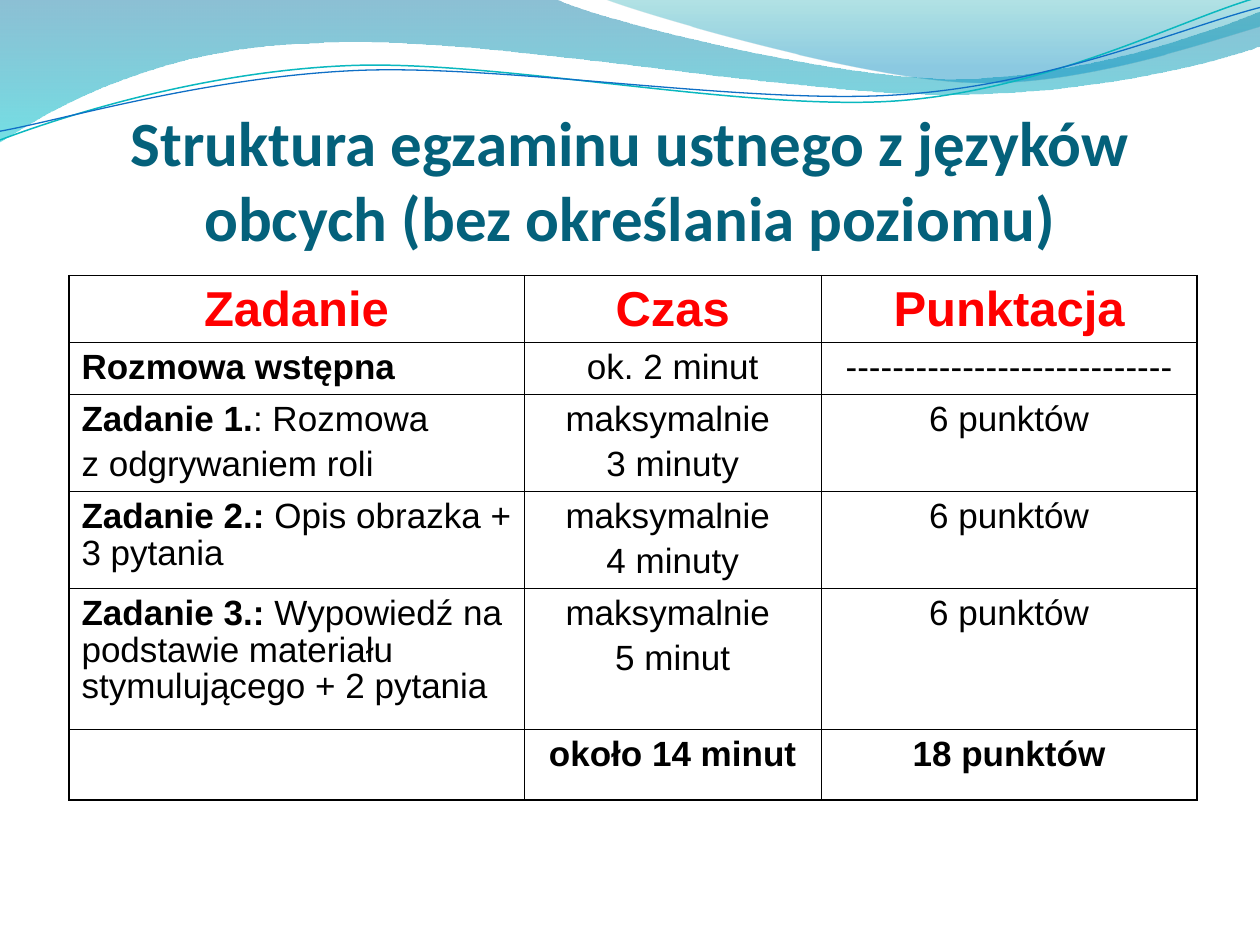
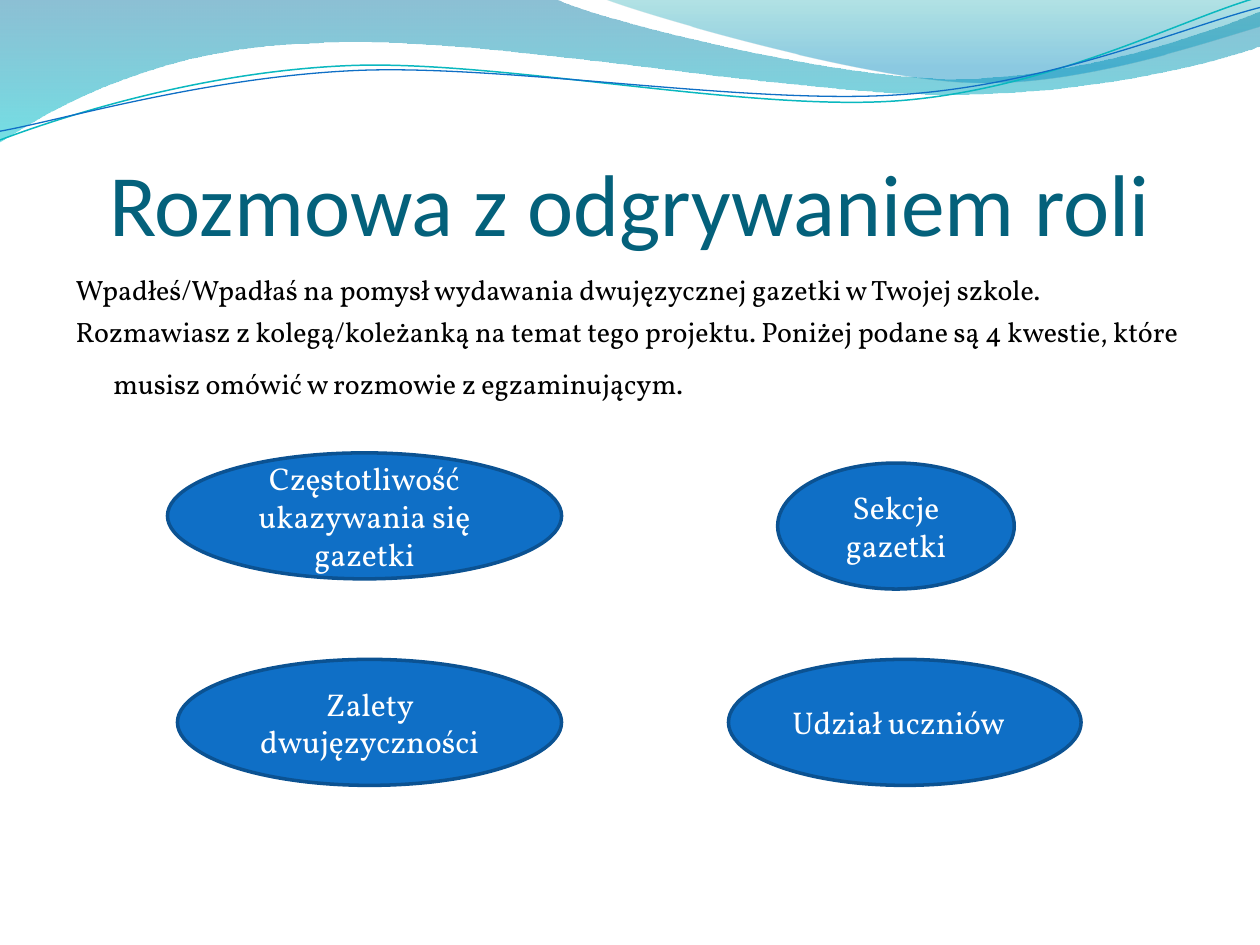
import pptx
import pptx.dml.color
import pptx.enum.shapes
import pptx.enum.text
import pptx.oxml
import pptx.oxml.ns
import pptx.util
from lxml import etree

Pt = pptx.util.Pt
qn = pptx.oxml.ns.qn
ALIGN = pptx.enum.text.PP_ALIGN
ANCHOR = pptx.enum.text.MSO_ANCHOR

BLACK, WHITE, RED = "000000", "FFFFFF", "FF0000"
TITLE_COLOR, BLUE, DARK_BLUE, TEAL = "04617B", "0F6FC6", "0B5292", "0AB8BF"
TITLE_FONT, TABLE_FONT, BODY_FONT = "Calibri", "Arial", "Vollkorn"
TITLE_BOX = (36, 55.3, 648, 90)
BODY_BOX = (36, 152.2, 648, 345.6)

BANDS = [
    {"start": (0, 0),
     "segments": [[(317, -0.7)],
                  [(343, 12), (478, 45), (546, 45)],
                  [(614, 45), (690, 19), (720, 6.5)],
                  [(720.7, 26)],
                  [(708, 32), (626, 55), (537, 54)],
                  [(448, 54), (275, 20), (185, 24.5)],
                  [(93, 26), (33, 60), (-0.7, 81.4)],
                  [(0, 0)]],
     "stops": [(0, "0074A1", 45), (1, "00C6CF", 55)]},
    {"start": (345, -0.7),
     "segments": [[(366.5, 8), (491, 44.6), (553.7, 46.8)],
                  [(616, 49.7), (692, 23), (720, 15)],
                  [(720, 0)],
                  [(345, -0.7)]],
     "stops": [(0, "00A1A9", 30), (0.8, "008BBF", 45)]},
    {"start": (0, 80),
     "segments": [[(34.5, 67), (114, 41), (199.5, 37.5)],
                  [(284.5, 34), (427, 64), (513.4, 57.6)],
                  [(600, 51), (675.4, 10.8), (718.6, -1.4)]],
     "line": (TEAL, 0.85)},
    {"start": (0, 75),
     "segments": [[(34, 69), (118, 44), (204, 40.3)],
                  [(290, 36.7), (430, 60.5), (516, 54)],
                  [(602, 48), (678, 15), (720, 4.3)]],
     "line": (BLUE, 0.75)},
]

EXAM_TITLE = "Struktura egzaminu ustnego z języków obcych (bez określania poziomu)"
TABLE_LEFT, TABLE_TOP = 39.4, 157.5
COLUMN_WIDTHS = [260, 170, 214.5]
ROW_HEIGHTS = [38, 29.7, 55.4, 55.4, 80.6, 40.4]
BOLD, PLAIN = True, False
EXAM_ROWS = [
    [[[("Zadanie", BOLD)]], [[("Czas", BOLD)]], [[("Punktacja", BOLD)]]],
    [[[("Rozmowa wstępna", BOLD)]],
     [[("ok. 2 minut", PLAIN)]],
     [[("----------------------------", PLAIN)]]],
    [[[("Zadanie 1.", BOLD), (": Rozmowa", PLAIN)], [("z odgrywaniem roli", PLAIN)]],
     [[("maksymalnie ", PLAIN)], [("3 minuty", PLAIN)]],
     [[("6 punktów", PLAIN)]]],
    [[[("Zadanie 2.: ", BOLD), ("Opis obrazka + 3 pytania", PLAIN)]],
     [[("maksymalnie ", PLAIN)], [("4 minuty", PLAIN)]],
     [[("6 punktów", PLAIN)]]],
    [[[("Zadanie 3.:", BOLD),
       (" Wypowiedź na podstawie materiału stymulującego + 2 pytania", PLAIN)]],
     [[("maksymalnie ", PLAIN)], [("5 minut", PLAIN)]],
     [[("6 punktów", PLAIN)]]],
    [[], [[("około 14 minut", BOLD)]], [[("18 punktów", BOLD)]]],
]

ROLE_PLAY_TITLE = "Rozmowa z odgrywaniem roli"
INSTRUCTIONS = [
    [("Wpadłeś/Wpadłaś na pomysł wydawania dwujęzycznej gazetki w Twojej szkole.", 16)],
    [("Rozmawiasz z kolegą/koleżanką na temat tego projektu. Poniżej podane są 4 kwestie, "
      "które musisz omówić w rozmowie z egzaminującym.", 16), ("\t", 26)],
]
TOPIC_HEIGHT = 72
TOPICS = [
    ("Częstotliwość ukazywania się gazetki", 95.7, 258.8, 225.2, ALIGN.CENTER),
    ("Sekcje gazetki", 444.4, 264.6, 135.2, ALIGN.CENTER),
    ("Zalety dwujęzyczności", 101.4, 376.8, 219.5, ALIGN.CENTER),
    ("Udział uczniów", 416.3, 376.8, 201.5, ALIGN.LEFT),
]


def rgb(color):
    return pptx.dml.color.RGBColor.from_string(color)


def add_span(para, text, font, size, color, bold=False):
    span = para.add_run()
    span.text = text
    span.font.name = font
    span.font.size = Pt(size)
    span.font.bold = bold
    span.font.color.rgb = rgb(color)


def next_para(frame, index):
    return frame.paragraphs[0] if index == 0 else frame.add_paragraph()


def place(box, left, top, width, height):
    box.left, box.top, box.width, box.height = map(Pt, (left, top, width, height))


def bend(shape, segments):
    for node, segment in zip(list(shape.element.iter(qn("a:lnTo"))), segments):
        if len(segment) == 3:
            curve = etree.Element(qn("a:cubicBezTo"))
            for x, y in segment:
                etree.SubElement(curve, qn("a:pt"), x=str(Pt(x) - shape.left),
                                 y=str(Pt(y) - shape.top))
            node.getparent().replace(node, curve)


def add_band(page, band):
    closed = "stops" in band
    builder = page.shapes.build_freeform(*map(Pt, band["start"]))
    ends = [(Pt(x), Pt(y)) for x, y in (segment[-1] for segment in band["segments"])]
    builder.add_line_segments(ends, close=closed)
    shape = builder.convert_to_shape()
    bend(shape, band["segments"])
    shape.shadow.inherit = False
    if closed:
        shape.line.fill.background()
        shape.fill.gradient()
        shape.fill.gradient_angle = 270
        for stop, (position, color, _) in zip(shape.fill.gradient_stops, band["stops"]):
            stop.position = position
            stop.color.rgb = rgb(color)
        for node, (_, _, opacity) in zip(shape.element.iter(qn("a:srgbClr")), band["stops"]):
            etree.SubElement(node, qn("a:alpha"), val=str(opacity * 1000))
    else:
        color, width = band["line"]
        shape.fill.background()
        shape.line.color.rgb = rgb(color)
        shape.line.width = Pt(width)
    return shape


def add_master_bands(deck, page):
    tree = deck.slide_master.shapes.element
    for index, band in enumerate(BANDS):
        tree.insert(2 + index, add_band(page, band).element)


def set_title(page, text, size, bold=False):
    title = page.shapes.title
    place(title, *TITLE_BOX)
    frame = title.text_frame
    frame.auto_size = pptx.enum.text.MSO_AUTO_SIZE.NONE
    frame.vertical_anchor = ANCHOR.BOTTOM
    frame.margin_left = frame.margin_right = frame.margin_bottom = 0
    frame.margin_top = Pt(3.6)
    para = frame.paragraphs[0]
    para.alignment = ALIGN.CENTER
    add_span(para, text, TITLE_FONT, size, TITLE_COLOR, bold)


def set_borders(cell, outer_sides):
    properties = cell._tc.get_or_add_tcPr()
    for index, side in enumerate("LRTB"):
        width = Pt(1.08 if side in outer_sides else 0.45)
        properties.insert(index, pptx.oxml.parse_xml(
            f'<a:ln{side} {pptx.oxml.ns.nsdecls("a")} w="{width}"><a:solidFill>'
            f'<a:srgbClr val="{BLACK}"/></a:solidFill></a:ln{side}>'))


def fill_cell(cell, paragraphs, is_header, is_first_column):
    size, color, gap = (28, RED, 7) if is_header else (20, BLACK, 5)
    cell.margin_left = cell.margin_right = Pt(7.2)
    cell.margin_top = Pt(5.6 if is_header else 4.8)
    cell.margin_bottom = Pt(3.6)
    for index, spans in enumerate(paragraphs):
        para = next_para(cell.text_frame, index)
        para.alignment = ALIGN.LEFT if is_first_column and not is_header else ALIGN.CENTER
        para.line_spacing = 0.93
        para.space_before = Pt(gap)
        for text, bold in spans:
            add_span(para, text, TABLE_FONT, size, color, bold)


def add_exam_table(page):
    last_row, last_column = len(ROW_HEIGHTS) - 1, len(COLUMN_WIDTHS) - 1
    table = page.shapes.add_table(
        len(ROW_HEIGHTS), len(COLUMN_WIDTHS), Pt(TABLE_LEFT), Pt(TABLE_TOP),
        Pt(sum(COLUMN_WIDTHS)), Pt(sum(ROW_HEIGHTS))).table
    table.first_row = table.horz_banding = False
    for column, width in zip(table.columns, COLUMN_WIDTHS):
        column.width = Pt(width)
    for row, height in zip(table.rows, ROW_HEIGHTS):
        row.height = Pt(height)
    for r, row in enumerate(EXAM_ROWS):
        for c, paragraphs in enumerate(row):
            cell = table.cell(r, c)
            cell.fill.background()
            fill_cell(cell, paragraphs, r == 0, c == 0)
            edges = {"L": c == 0, "R": c == last_column, "T": r == 0, "B": r == last_row}
            set_borders(cell, [side for side, outer in edges.items() if outer])


def set_instructions(page):
    body = page.placeholders[1]
    place(body, *BODY_BOX)
    frame = body.text_frame
    frame.auto_size = pptx.enum.text.MSO_AUTO_SIZE.NONE
    for index, spans in enumerate(INSTRUCTIONS):
        para = next_para(frame, index)
        para.space_before = Pt(5)
        properties = para._p.get_or_add_pPr()
        properties.set("marL", str(Pt(21.6)))
        properties.set("indent", str(Pt(-21.6)))
        etree.SubElement(properties, qn("a:buNone"))
        for text, size in spans:
            add_span(para, text, BODY_FONT, size, BLACK)


def add_topic(page, text, left, top, width, alignment):
    oval = page.shapes.add_shape(pptx.enum.shapes.MSO_SHAPE.OVAL, Pt(left), Pt(top),
                                 Pt(width), Pt(TOPIC_HEIGHT))
    oval.shadow.inherit = False
    oval.fill.solid()
    oval.fill.fore_color.rgb = rgb(BLUE)
    oval.line.color.rgb = rgb(DARK_BLUE)
    oval.line.width = Pt(2)
    oval.text_frame.word_wrap = True
    oval.text_frame.vertical_anchor = ANCHOR.MIDDLE
    para = oval.text_frame.paragraphs[0]
    para.alignment = alignment
    add_span(para, text, BODY_FONT, 18, WHITE)


def main():
    deck = pptx.Presentation()
    deck.slide_width, deck.slide_height = Pt(720), Pt(540)

    exam_page = deck.slides.add_slide(deck.slide_layouts[5])
    add_master_bands(deck, exam_page)
    set_title(exam_page, EXAM_TITLE, 36, bold=True)
    add_exam_table(exam_page)

    role_play_page = deck.slides.add_slide(deck.slide_layouts[1])
    set_title(role_play_page, ROLE_PLAY_TITLE, 50)
    set_instructions(role_play_page)
    for topic in TOPICS:
        add_topic(role_play_page, *topic)

    deck.save("out.pptx")


if __name__ == "__main__":
    main()
